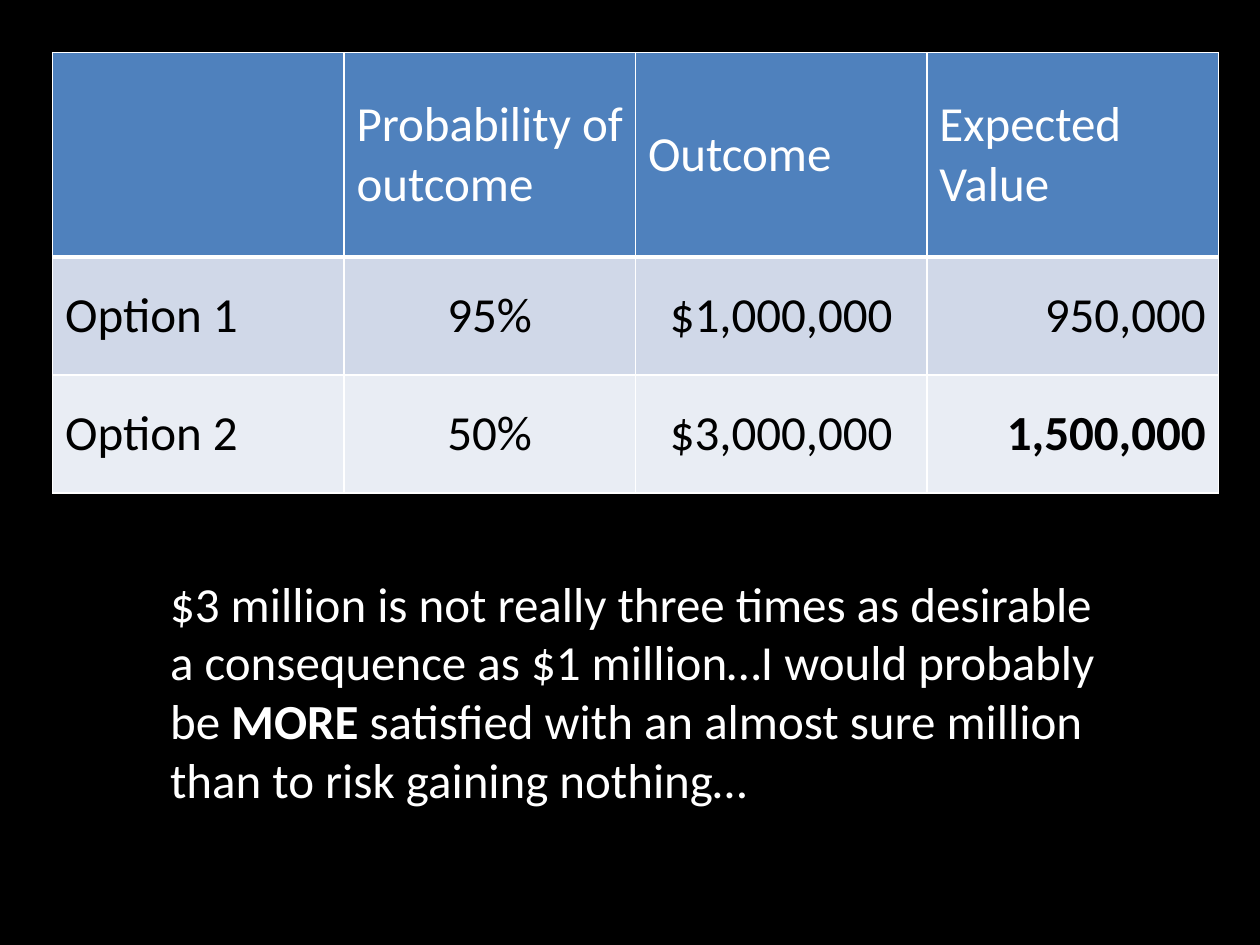
from lxml import etree
from pptx import Presentation
from pptx.dml.color import RGBColor
from pptx.enum.text import MSO_ANCHOR, MSO_AUTO_SIZE, PP_ALIGN
from pptx.oxml.ns import qn
from pptx.util import Cm, Pt

LEFT, CENTER, RIGHT = PP_ALIGN.LEFT, PP_ALIGN.CENTER, PP_ALIGN.RIGHT
MIDDLE = MSO_ANCHOR.MIDDLE
GROW = MSO_AUTO_SIZE.SHAPE_TO_FIT_TEXT

BLACK = RGBColor(0x00, 0x00, 0x00)
WHITE = RGBColor(0xFF, 0xFF, 0xFF)
HEADER_BLUE = RGBColor(0x4F, 0x81, 0xBD)
BAND_DARK = RGBColor(0xD0, 0xD8, 0xE8)
BAND_LIGHT = RGBColor(0xE9, 0xED, 0xF4)

ROW_FILLS = [HEADER_BLUE, BAND_DARK, BAND_LIGHT]
ROW_HEIGHTS = [4.12, 2.38, 2.38]
COLUMN_ALIGNMENTS = [LEFT, CENTER, CENTER, RIGHT]
OPTIONS = [
    ["", "Probability of outcome", "Outcome", "Expected Value"],
    ["Option 1", "95%", "$1,000,000", "950,000"],
    ["Option 2", "50%", "$3,000,000", "1,500,000"],
]
BEST_VALUE = "1,500,000"
REMARK = [
    ("$3 million is not really three times as desirable a consequence "
     "as $1 million…I would probably be ", False),
    ("MORE ", True),
    ("satisfied with an almost sure million than to risk gaining nothing…", False),
]


class SlideWriter:
    text_format = {"name": "Calibri", "size": Pt(28)}

    def __init__(self, slide):
        self.slide = slide

    def background(self, color):
        fill = self.slide.background.fill
        fill.solid()
        fill.fore_color.rgb = color

    def span(self, para, text, color, bold=False):
        span = para.add_run()
        span.text = text
        for name, value in {**self.text_format, "bold": bold}.items():
            setattr(span.font, name, value)
        span.font.color.rgb = color

    def borders(self, cell, bottom):
        properties = cell._tc.get_or_add_tcPr()
        for side, width in {"L": 1, "R": 1, "T": 1, "B": bottom}.items():
            line = etree.SubElement(properties, qn(f"a:ln{side}"), w=str(Pt(width)))
            fill = etree.SubElement(line, qn("a:solidFill"))
            etree.SubElement(fill, qn("a:srgbClr"), val=str(WHITE))

    def table(self, left, top, width, rows):
        columns = len(rows[0])
        frame = self.slide.shapes.add_table(
            len(rows), columns, Cm(left), Cm(top), Cm(width), Cm(sum(ROW_HEIGHTS)))
        table = frame.table
        for row, height in zip(table.rows, ROW_HEIGHTS):
            row.height = Cm(height)
        for row_index, texts in enumerate(rows):
            is_header = row_index == 0
            for column_index, text in enumerate(texts):
                cell = table.cell(row_index, column_index)
                self.borders(cell, 3 if is_header else 1)
                cell.fill.solid()
                cell.fill.fore_color.rgb = ROW_FILLS[row_index]
                cell.vertical_anchor = MIDDLE
                para = cell.text_frame.paragraphs[0]
                para.alignment = LEFT if is_header else COLUMN_ALIGNMENTS[column_index]
                if text:
                    self.span(para, text, WHITE if is_header else BLACK,
                              text == BEST_VALUE)

    def text(self, left, top, width, height, spans):
        box = self.slide.shapes.add_textbox(Cm(left), Cm(top), Cm(width), Cm(height))
        for name, value in {"word_wrap": True, "auto_size": GROW}.items():
            setattr(box.text_frame, name, value)
        for text, bold in spans:
            self.span(box.text_frame.paragraphs[0], text, WHITE, bold)


def main():
    deck = Presentation()
    deck.slide_width, deck.slide_height = Cm(25.4), Cm(19.05)
    page = SlideWriter(deck.slides.add_slide(deck.slide_layouts[6]))
    page.background(BLACK)
    page.table(1.06, 1.06, 23.5, OPTIONS)
    page.text(3.18, 11.43, 19.25, 5.82, REMARK)
    deck.save("out.pptx")


if __name__ == "__main__":
    main()
